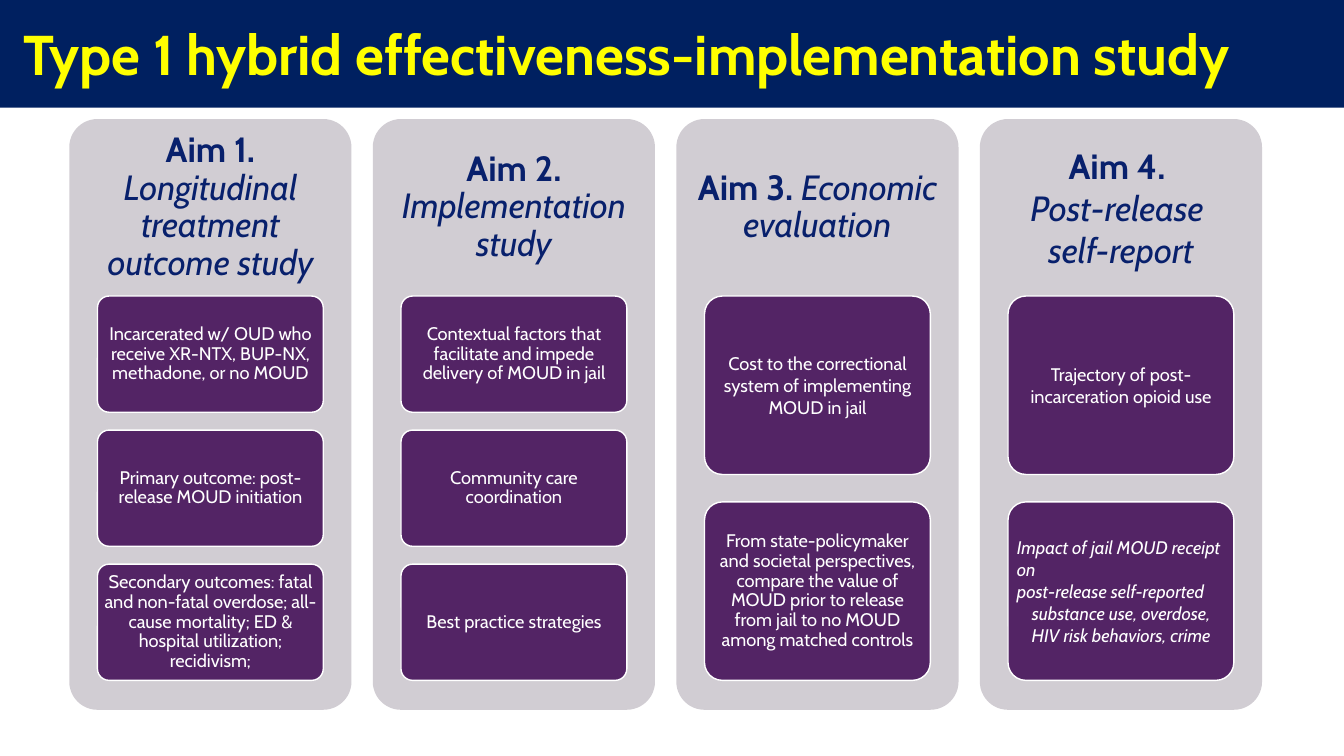
"""Build a slide that lays out the four aims of a hybrid study."""
from pptx import Presentation
from pptx.dml.color import RGBColor as Rgb
from pptx.enum.shapes import MSO_SHAPE as Kind
from pptx.enum.text import MSO_ANCHOR as Anchor, PP_ALIGN as Align
from pptx.util import Pt


class Theme:
    font = "Cabin"
    navy = Rgb.from_string("002060")
    yellow = Rgb.from_string("FFFF00")
    grey = Rgb.from_string("D1CDD3")
    blue = Rgb.from_string("08206C")
    purple = Rgb.from_string("532465")
    white = Rgb.from_string("FFFFFF")
    title, head, body = 40, 25, 13


def block(slide, kind, area, fill):
    """Add a plain filled shape."""
    shape = slide.shapes.add_shape(kind, *map(Pt, area))
    shape.shadow.inherit = False
    shape.fill.solid()
    shape.fill.fore_color.rgb = fill
    shape.line.fill.background()
    if kind == Kind.ROUNDED_RECTANGLE:
        shape.adjustments[0] = 0.1
    return shape


def write(shape, paras, size, color, pad, space=1.0):
    """Write paragraphs of (align, runs), each run being (text, bold, italic)."""
    frame = shape.text_frame
    frame.word_wrap = True
    frame.vertical_anchor = Anchor.MIDDLE
    frame.margin_left = frame.margin_right = Pt(pad[0])
    frame.margin_top = frame.margin_bottom = Pt(pad[1])
    for index, (align, runs) in enumerate(paras):
        para = frame.add_paragraph() if index else frame.paragraphs[0]
        para.alignment = align
        para.line_spacing = space
        for text, bold, italic in runs:
            run = para.add_run()
            run.text = text
            font = run.font
            font.name, font.size = Theme.font, Pt(size)
            font.bold, font.italic = bold, italic
            font.color.rgb = color


aims = [
    (0.9, [[("Aim 1. ", True, False),
            ("Longitudinal treatment outcome study", False, True)]],
     [(0.9, "Incarcerated w/ OUD who receive XR-NTX, BUP-NX, methadone, or no MOUD"),
      (0.9, "Primary outcome: post-release MOUD initiation"),
      (0.9, "Secondary outcomes: fatal and non-fatal overdose; all-cause mortality; "
            "ED & hospital utilization; recidivism;")]),
    (0.9, [[("Aim 2. ", True, False), ("Implementation study", False, True)]],
     [(0.9, "Contextual factors that facilitate and impede delivery of MOUD in jail"),
      (0.9, "Community care coordination"),
      (0.9, "Best practice strategies")]),
    (0.9, [[("Aim 3. ", True, False), ("Economic evaluation", False, True)]],
     [(1.0, "Cost to the correctional system of implementing MOUD in jail"),
      (0.9, "From state-policymaker and societal perspectives, compare the value "
            "of MOUD prior to release from jail to no MOUD among matched controls")]),
    (1.0, [[("Aim 4. ", True, False)], [("Post-release ", False, True)],
           [("self-report", False, True)]],
     [(1.0, "Trajectory of post-incarceration opioid use")]),
]
impact = [
    (Align.LEFT, [("Impact of jail MOUD receipt on", False, True)]),
    (Align.LEFT, [("post-release self-reported ", False, True)]),
    (Align.CENTER, [("substance use, overdose, HIV risk behaviors, crime", False, True)]),
]

deck = Presentation()
deck.slide_width, deck.slide_height = Pt(960), Pt(540)
slide = deck.slides.add_slide(deck.slide_layouts[6])

block(slide, Kind.RECTANGLE, (0, 0, 960, 77), Theme.navy)

left, top, wide, tall, pitch = 49.5, 85, 201.6, 422, 216.8
start, span, ratio = 211.5, 274.5, 2 / 13
for col, (space, head, notes) in enumerate(aims):
    x = left + col * pitch
    block(slide, Kind.ROUNDED_RECTANGLE, (x, top, wide, tall), Theme.grey)
    label = slide.shapes.add_textbox(Pt(x), Pt(top), Pt(wide), Pt(start - top))
    write(label, [(Align.CENTER, runs) for runs in head],
          Theme.head, Theme.blue, (7.2, 7.2), space)

    cards = [(gap, [(Align.CENTER, [(text, False, False)])]) for gap, text in notes]
    if col == 3:
        cards.append((1.0, impact))
    count = len(cards)
    high = span / (count + (count - 1) * ratio)
    for row, (gap, paras) in enumerate(cards):
        y = start + row * high * (1 + ratio)
        card = block(slide, Kind.ROUNDED_RECTANGLE,
                     (x + wide * 0.1, y, wide * 0.8, high), Theme.purple)
        card.line.color.rgb = Theme.white
        card.line.width = Pt(1)
        write(card, paras, Theme.body, Theme.white, (2.6, 1.95), gap)

title = slide.shapes.add_textbox(Pt(0.7), Pt(10), Pt(960), Pt(55.5))
write(title, [(Align.LEFT, [("Type 1 hybrid effectiveness-implementation study", True, False)])],
      Theme.title, Theme.yellow, (15.8, 3.6))

deck.save("out.pptx")
